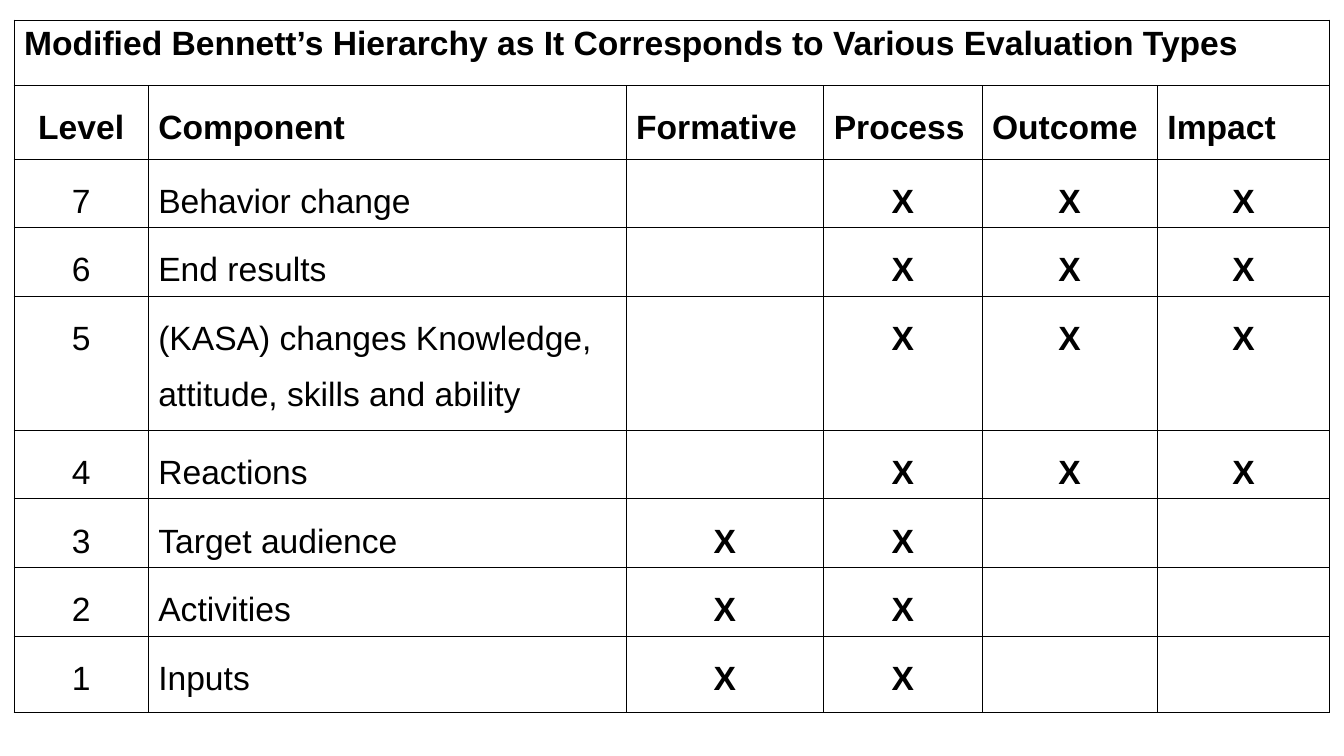
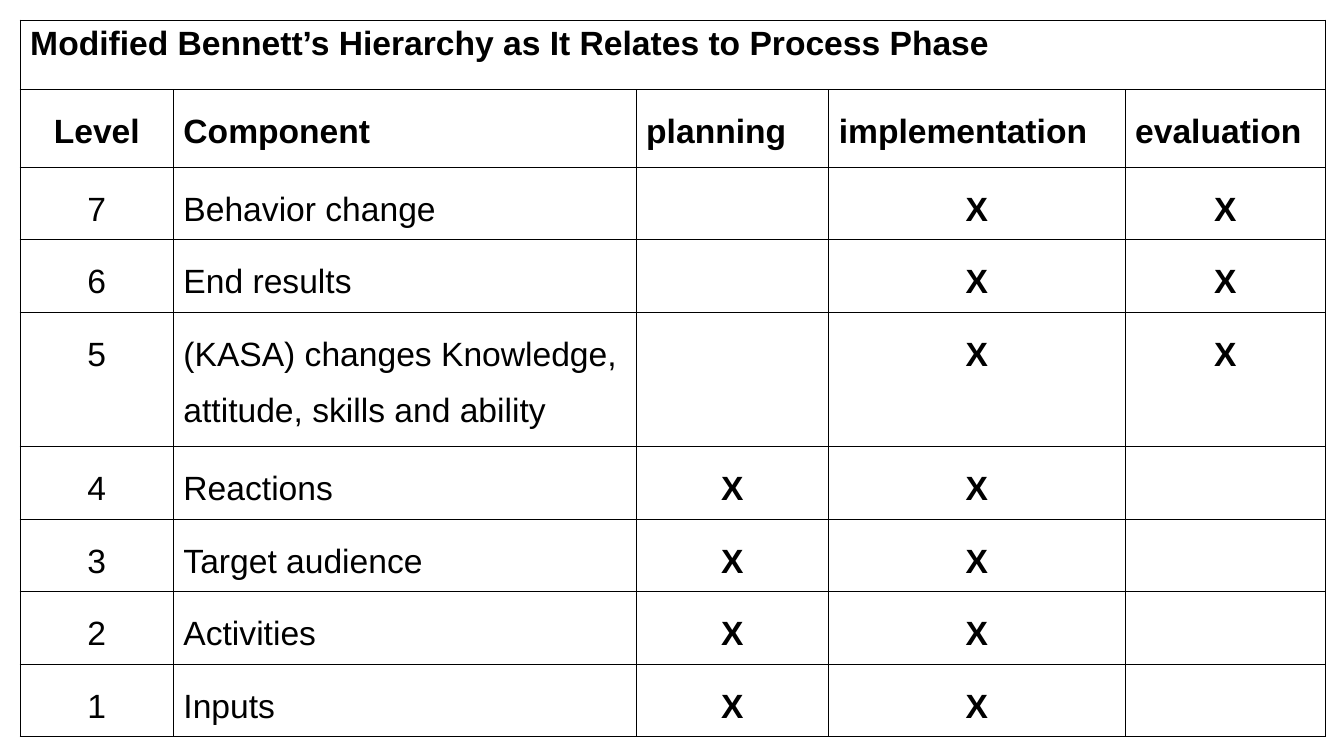
from lxml.etree import SubElement
from pptx import Presentation
from pptx.dml.color import RGBColor
from pptx.enum.text import MSO_ANCHOR, PP_ALIGN
from pptx.oxml.ns import qn
from pptx.util import Inches, Pt

INK = "000000"
FONT = {"name": "Arial", "size": Pt(24)}
BORDER_WIDTH = Pt(0.75)
LINE_SPACING = 1.5
TALL_ROW = 1.33

# Highest level first, numbered down to 1
COMPONENTS = [
    "Behavior change",
    "End results",
    "(KASA) changes Knowledge, attitude, skills and ability",
    "Reactions",
    "Target audience",
    "Activities",
    "Inputs",
]
TALL_LEVEL = 5

# Each heading comes with the levels that are marked below it
HIERARCHIES = [
    {
        "title": "Modified Bennett’s Hierarchy as It Corresponds to Various Evaluation Types",
        "marks": {
            "Formative": (1, 2, 3),
            "Process": range(1, 8),
            "Outcome": range(4, 8),
            "Impact": range(4, 8),
        },
        "corner": (0.14, 0.2),
        "columns": (1.33, 4.74, 1.96, 1.57, 1.74, 1.71),
        "title_row": 0.65, "header_row": 0.73, "level_row": 0.68, "last_row": 0.76,
    },
    {
        "title": "Modified Bennett’s Hierarchy as It Relates to Process Phase",
        "marks": {
            "planning": range(1, 5),
            "implementation": range(1, 8),
            "evaluation": (5, 6, 7),
        },
        "corner": (0.2, 0.2),
        "columns": (1.52, 4.59, 1.91, 2.94, 1.99),
        "title_row": 0.69, "header_row": 0.77, "level_row": 0.72, "last_row": 0.72,
    },
]


def color(hex_code):
    return RGBColor.from_string(hex_code)


def add_borders(cell):
    properties = cell._tc.get_or_add_tcPr()
    for position, side in enumerate(("a:lnL", "a:lnR", "a:lnT", "a:lnB")):
        line = SubElement(properties, qn(side), w=str(BORDER_WIDTH))
        fill = SubElement(line, qn("a:solidFill"))
        SubElement(fill, qn("a:srgbClr"), val=INK)
        properties.insert(position, line)


def write(cell, text, bold, centered=False, spacing=LINE_SPACING):
    paragraph = cell.text_frame.paragraphs[0]
    paragraph.alignment = PP_ALIGN.CENTER if centered else PP_ALIGN.LEFT
    paragraph.line_spacing = spacing
    run = paragraph.add_run()
    run.text = text
    for attribute, value in {**FONT, "bold": bold}.items():
        setattr(run.font, attribute, value)
    run.font.color.rgb = color(INK)


def row_heights(hierarchy):
    levels = [hierarchy["level_row"]] * len(COMPONENTS)
    levels[len(COMPONENTS) - TALL_LEVEL] = TALL_ROW
    levels[-1] = hierarchy["last_row"]
    return [hierarchy["title_row"], hierarchy["header_row"], *levels]


def add_hierarchy(slide, hierarchy):
    columns, heights = hierarchy["columns"], row_heights(hierarchy)
    marks = hierarchy["marks"]
    left, top = hierarchy["corner"]
    table = slide.shapes.add_table(
        len(heights), len(columns), Inches(left), Inches(top),
        Inches(sum(columns)), Inches(sum(heights))).table
    table.first_row = table.horz_banding = False
    for column, width in zip(table.columns, columns):
        column.width = Inches(width)
    for row, height in zip(table.rows, heights):
        row.height = Inches(height)
    for cell in table.iter_cells():
        cell.fill.background()
        cell.vertical_anchor = MSO_ANCHOR.TOP
        add_borders(cell)

    table.cell(0, 0).merge(table.cell(0, len(columns) - 1))
    write(table.cell(0, 0), hierarchy["title"], bold=True, spacing=1.0)
    for index, heading in enumerate(("Level", "Component", *marks)):
        write(table.cell(1, index), heading, bold=True, centered=index == 0)
    for index, component in enumerate(COMPONENTS):
        level, row = len(COMPONENTS) - index, index + 2
        write(table.cell(row, 0), str(level), bold=False, centered=True)
        write(table.cell(row, 1), component, bold=False)
        for column, marked_levels in enumerate(marks.values(), start=2):
            if level in marked_levels:
                write(table.cell(row, column), "X", bold=True, centered=True)


def main():
    deck = Presentation()
    deck.slide_width, deck.slide_height = Inches(13.33), Inches(7.5)
    blank = deck.slide_layouts[6]
    for hierarchy in HIERARCHIES:
        add_hierarchy(deck.slides.add_slide(blank), hierarchy)
    deck.save("out.pptx")


if __name__ == "__main__":
    main()
